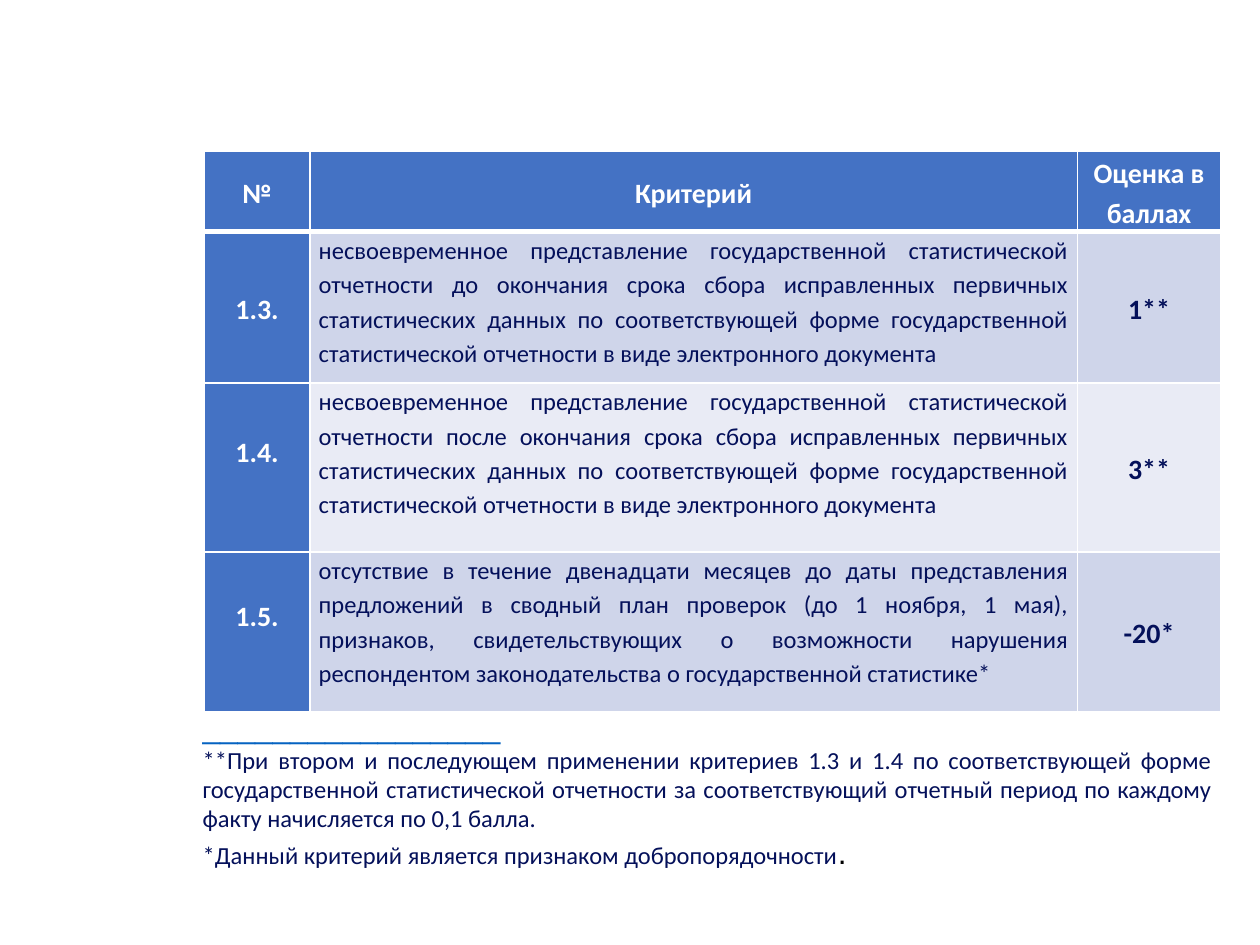
import pptx
import pptx.dml.color
import pptx.enum.text
import pptx.oxml
import pptx.oxml.ns
import pptx.util
from dataclasses import dataclass

Inches = pptx.util.Inches
Align = pptx.enum.text.PP_ALIGN
Anchor = pptx.enum.text.MSO_ANCHOR


@dataclass(frozen=True)
class Theme:
    accent: str = "4472C4"
    band_dark: str = "CFD5EA"
    band_light: str = "E9EBF5"
    ink: str = "04105A"
    white: str = "FFFFFF"
    black: str = "000000"
    rule: str = "0563C1"
    body_font: str = "Calibri"
    mark_font: str = "Arial"
    label_size: int = 16
    body_size: int = 14
    mark_size: int = 18
    thin: int = 1
    thick: int = 3


THEME = Theme()
COLUMN_WIDTHS = (0.84, 6.09, 1.14)
ROW_HEIGHTS = (0.64, 1.2, 1.34, 1.27)
HEADERS = ("№", "Критерий", "Оценка в баллах")
LATE_REPORT = (
    "несвоевременное представление государственной статистической отчетности {} "
    "окончания срока сбора исправленных первичных статистических данных по "
    "соответствующей форме государственной статистической отчетности в виде "
    "электронного документа"
)
CRITERIA = (
    ("1.3.", LATE_REPORT.format("до"), "1**", 0),
    ("1.4.", LATE_REPORT.format("после"), "3**", 0.27),
    (
        "1.5.",
        "отсутствие в течение двенадцати месяцев до даты представления предложений "
        "в сводный план проверок (до 1 ноября, 1 мая), признаков, свидетельствующих "
        "о возможности нарушения респондентом законодательства о государственной "
        "статистике*",
        "-20*",
        0.27,
    ),
)
REPEAT_NOTE = (
    "**При втором и последующем применении критериев 1.3 и 1.4 по соответствующей "
    "форме государственной статистической отчетности за соответствующий отчетный "
    "период по каждому факту начисляется по 0,1 балла."
)
INTEGRITY_NOTE = "*Данный критерий является признаком добропорядочности"


def apply_format(target, values):
    for name, value in values.items():
        setattr(target, name, value)


def add_run(paragraph, text, color, size, font_name=THEME.body_font, bold=False):
    run = paragraph.add_run()
    run.text = text
    apply_format(run.font, {"name": font_name, "size": pptx.util.Pt(size), "bold": bold})
    run.font.color.rgb = pptx.dml.color.RGBColor.from_string(color)


def set_borders(cell, top, bottom):
    properties = cell._tc.get_or_add_tcPr()
    widths = {"lnL": THEME.thin, "lnR": THEME.thin, "lnT": top, "lnB": bottom}
    for side, width in widths.items():
        properties.append(pptx.oxml.parse_xml(
            f'<a:{side} {pptx.oxml.ns.nsdecls("a")} w="{pptx.util.Pt(width)}">'
            f'<a:solidFill><a:srgbClr val="{THEME.white}"/></a:solidFill></a:{side}>'
        ))


def fill_cell(cell, text, fill, color, row, body=False, bottom_margin=0):
    set_borders(
        cell,
        THEME.thick if row == 1 else THEME.thin,
        THEME.thick if row == 0 else THEME.thin,
    )
    cell.fill.solid()
    cell.fill.fore_color.rgb = pptx.dml.color.RGBColor.from_string(fill)
    apply_format(cell, {
        "margin_left": Inches(0.07),
        "margin_right": Inches(0.07),
        "margin_top": 0,
        "margin_bottom": Inches(bottom_margin),
        "vertical_anchor": Anchor.TOP if body else Anchor.MIDDLE,
    })
    paragraph = cell.text_frame.paragraphs[0]
    apply_format(paragraph, {
        "alignment": Align.JUSTIFY if body else Align.CENTER,
        "line_spacing": 1.15,
    })
    size = THEME.body_size if body else THEME.label_size
    add_run(paragraph, text, color, size, bold=not body)


def add_criteria_table(slide):
    shape = slide.shapes.add_table(
        len(ROW_HEIGHTS), len(COLUMN_WIDTHS), Inches(1.62), Inches(1.2),
        Inches(sum(COLUMN_WIDTHS)), Inches(sum(ROW_HEIGHTS)),
    )
    table = shape.table
    table.first_col = True
    for column, width in zip(table.columns, COLUMN_WIDTHS):
        column.width = Inches(width)
    for row, height in zip(table.rows, ROW_HEIGHTS):
        row.height = Inches(height)
    for column, text in enumerate(HEADERS):
        fill_cell(table.cell(0, column), text, THEME.accent, THEME.white, 0)
    for row, (number, criterion, score, lift) in enumerate(CRITERIA, start=1):
        band = THEME.band_dark if row % 2 else THEME.band_light
        fill_cell(table.cell(row, 0), number, THEME.accent, THEME.white, row,
                  bottom_margin=lift)
        fill_cell(table.cell(row, 1), criterion, band, THEME.ink, row, body=True)
        fill_cell(table.cell(row, 2), score, band, THEME.ink, row)


def add_footnotes(slide):
    shape = slide.shapes.add_textbox(Inches(1.51), Inches(5.56), Inches(8.21), Inches(1.41))
    frame = shape.text_frame
    apply_format(frame, {
        "word_wrap": True,
        "auto_size": pptx.enum.text.MSO_AUTO_SIZE.SHAPE_TO_FIT_TEXT,
    })
    add_run(frame.paragraphs[0], "_" * 17, THEME.rule, THEME.mark_size, THEME.mark_font)
    for note in (REPEAT_NOTE, INTEGRITY_NOTE):
        paragraph = frame.add_paragraph()
        paragraph.alignment = Align.JUSTIFY
        add_run(paragraph, note, THEME.ink, THEME.body_size)
    add_run(paragraph, ".", THEME.black, THEME.mark_size, THEME.mark_font)


def main():
    presentation = pptx.Presentation()
    apply_format(presentation, {"slide_width": Inches(10), "slide_height": Inches(7.5)})
    slide = presentation.slides.add_slide(presentation.slide_layouts[6])
    add_criteria_table(slide)
    add_footnotes(slide)
    presentation.save("out.pptx")


if __name__ == "__main__":
    main()
